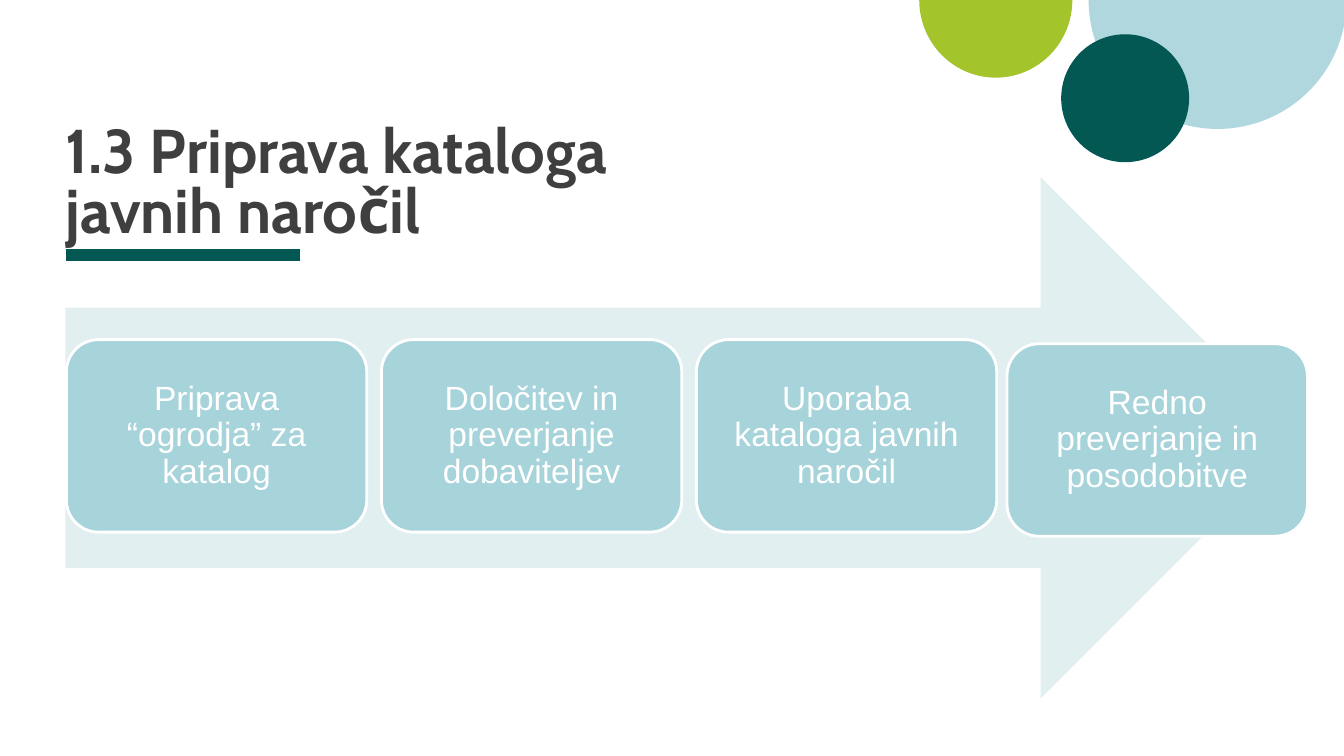
from lxml.etree import SubElement
from pptx import Presentation
from pptx.dml.color import RGBColor
from pptx.enum.shapes import MSO_CONNECTOR, MSO_SHAPE
from pptx.enum.text import MSO_ANCHOR, MSO_AUTO_SIZE, PP_ALIGN
from pptx.oxml.ns import qn
from pptx.util import Pt

LEFT_EDGE = 46.8
CARD_SIZE = (214.6, 137.5)
CARDS = [
    ("Priprava “ogrodja” za katalog", 47.4, 242.6),
    ("Določitev in preverjanje dobaviteljev", 272.4, 242.6),
    ("Uporaba kataloga javnih naročil", 497.4, 242.6),
    ("Redno preverjanje in posodobitve", 719.3, 245.5),
]


def color(value):
    return RGBColor.from_string(value)


def apply(target, values):
    for name, value in values.items():
        setattr(target, name, value)


class SlideBuilder:
    title_font = {"name": "Cabin", "size": Pt(44.1), "bold": True}
    card_font = {"name": "Arial", "size": Pt(24), "bold": False}
    title_color, card_text = "3F3F3F", "FFFFFF"
    dark, green, pale = "035854", "A3C42A", "AFD7DD"
    arrow_fill, card_fill, card_line = "E1EFF1", "A7D3DA", "FFFFFF"

    def __init__(self, page):
        self.page = page

    def shape(self, kind, left, top, width, height, fill, adjustments=()):
        box = self.page.shapes.add_shape(kind, Pt(left), Pt(top), Pt(width), Pt(height))
        box.shadow.inherit = False
        box.fill.solid()
        box.fill.fore_color.rgb = color(fill)
        box.line.fill.background()
        for index, value in enumerate(adjustments):
            box.adjustments[index] = value
        return box

    def half_disc(self, left, top, width, height, fill):
        return self.shape(MSO_SHAPE.PIE, left, top, width, height, fill, (0, 108))

    def rule(self, left, right, y, weight):
        line = self.page.shapes.add_connector(
            MSO_CONNECTOR.STRAIGHT, Pt(left), Pt(y), Pt(right), Pt(y))
        line.line.color.rgb = color(self.dark)
        line.line.width = Pt(weight)
        SubElement(line._element.spPr, qn("a:effectLst"))

    def text(self, box, words, font, font_color, anchor, align, spacing, inset):
        frame = box.text_frame
        apply(frame, {
            "word_wrap": True, "auto_size": MSO_AUTO_SIZE.NONE, "vertical_anchor": anchor,
            "margin_left": Pt(inset), "margin_right": Pt(inset),
            "margin_top": Pt(inset), "margin_bottom": Pt(inset),
        })
        para = frame.paragraphs[0]
        para.text = words
        apply(para, {"alignment": align, "line_spacing": spacing})
        for span in para.runs:
            apply(span.font, font)
            span.font.color.rgb = color(font_color)

    def title(self, words, left, top, width, height):
        box = self.page.shapes.title
        apply(box, {"left": Pt(left), "top": Pt(top), "width": Pt(width), "height": Pt(height)})
        self.text(box, words, self.title_font, self.title_color,
                  MSO_ANCHOR.BOTTOM, PP_ALIGN.LEFT, 0.8, 0)

    def card(self, words, left, top):
        box = self.shape(MSO_SHAPE.ROUNDED_RECTANGLE, left, top, *CARD_SIZE,
                         self.card_fill, (0.167,))
        box.line.color.rgb = color(self.card_line)
        box.line.width = Pt(2)
        self.text(box, words, self.card_font, self.card_text,
                  MSO_ANCHOR.MIDDLE, PP_ALIGN.CENTER, 0.9, 9)


def main():
    deck = Presentation()
    apply(deck, {"slide_width": Pt(960), "slide_height": Pt(540)})
    builder = SlideBuilder(deck.slides.add_slide(deck.slide_layouts[5]))
    builder.half_disc(777.6, -92.2, 184.3, 184.3, builder.pale)
    builder.half_disc(656.6, -55.4, 109.4, 110.9, builder.green)
    builder.shape(MSO_SHAPE.OVAL, 758, 24.5, 91.4, 91.4, builder.dark)
    builder.rule(LEFT_EDGE, 214.6, 182.2, 8)
    builder.shape(MSO_SHAPE.RIGHT_ARROW, LEFT_EDGE, 126.7, 882.7, 372.2,
                  builder.arrow_fill, (0.5, 0.5))
    builder.title("1.3 Priprava kataloga\vjavnih naročil", LEFT_EDGE, 132.5, 870.5, 42.5)
    for words, left, top in CARDS:
        builder.card(words, left, top)
    deck.save("out.pptx")


if __name__ == "__main__":
    main()
